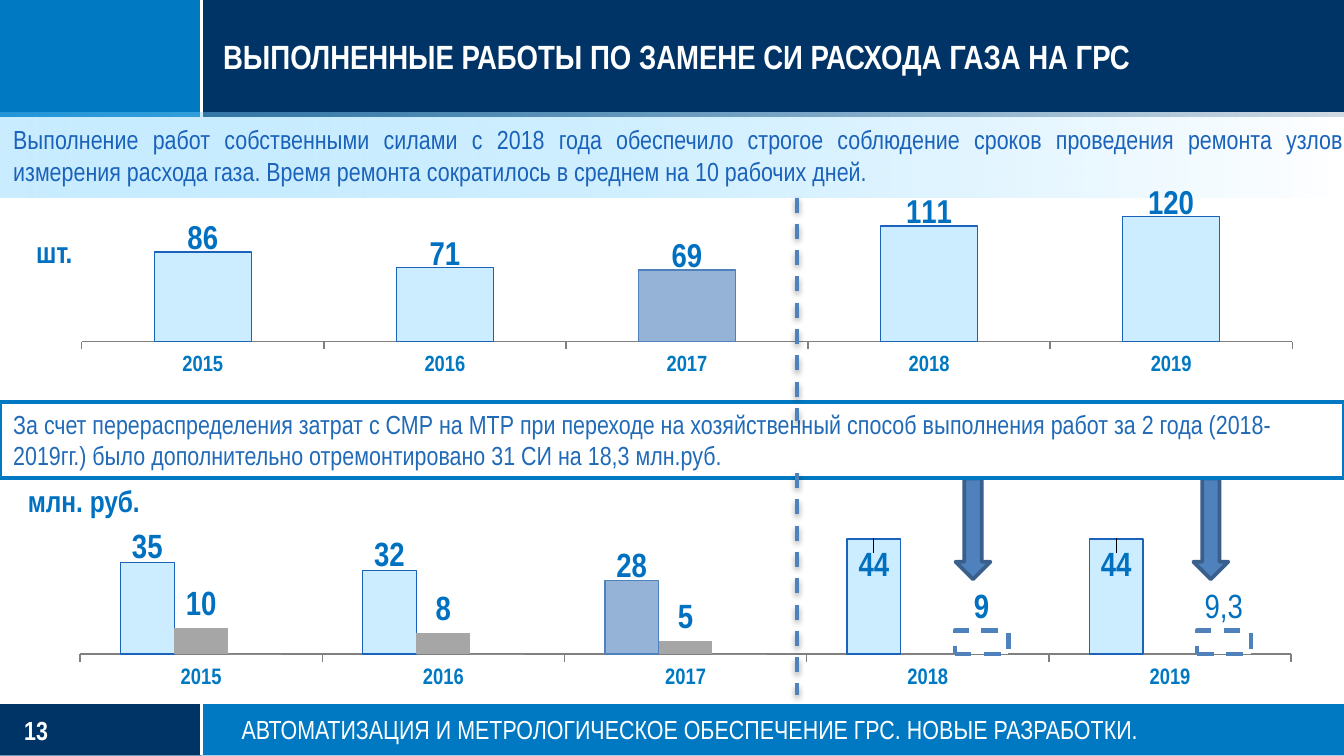
import pptx
import pptx.chart.data
import pptx.dml.color
import pptx.enum.chart
import pptx.enum.dml
import pptx.enum.shapes
import pptx.enum.text
import pptx.oxml
import pptx.oxml.ns
import pptx.util

Inches, Pt = pptx.util.Inches, pptx.util.Pt
SHAPE = pptx.enum.shapes.MSO_SHAPE
DASH = pptx.enum.dml.MSO_LINE.DASH
ALIGN = pptx.enum.text.PP_ALIGN
ANCHOR = pptx.enum.text.MSO_ANCHOR
LABEL = pptx.enum.chart.XL_LABEL_POSITION

FONT = "Arial Narrow"
COLORS = {
    "white": "FFFFFF", "blue": "0079C2", "navy": "003366", "label": "0070C0",
    "sky": "66CCFF", "pale": "CCECFF", "muted": "95B3D7", "steel": "4F81BD",
    "steel_dark": "3A5F8C", "bar_edge": "1A62BA", "note": "206AB7",
    "gray": "A6A6A6", "axis": "808080", "black": "000000",
}
YEARS = ["2015", "2016", "2017", "2018", "2019"]
BAR_COLORS = ["pale", "pale", "muted", "pale", "pale"]
SIDE, SPLIT = 1.5, 5.93  # left column edge, divider between 2017 and 2018
LABEL_DROP = 0.04  # main labels sit lower by this share of the chart height


def rgb(name):
    return pptx.dml.color.RGBColor.from_string(COLORS[name])


def style_font(font, size, color, bold=False):
    font.name, font.size, font.bold = FONT, Pt(size), bold
    font.color.rgb = rgb(color)


def style_line(line, color, width, dash=None):
    line.color.rgb = rgb(color)
    line.width = Pt(width)
    if dash is not None:
        line.dash_style = dash


def add_block(slide, box, fill=None, line=None, kind=SHAPE.RECTANGLE):
    shape = slide.shapes.add_shape(kind, *map(Inches, box))
    shape.shadow.inherit = False
    if fill:
        shape.fill.solid()
        shape.fill.fore_color.rgb = rgb(fill)
    else:
        shape.fill.background()
    if line:
        style_line(shape.line, *line)
    else:
        shape.line.fill.background()
    return shape


def write(shape, text, size, color, bold=False, align=ALIGN.LEFT,
          anchor=ANCHOR.TOP, insets=(0.1, 0.05, 0.1, 0.05), wrap=True):
    frame = shape.text_frame
    frame.word_wrap = wrap
    frame.vertical_anchor = anchor
    (frame.margin_left, frame.margin_top,
     frame.margin_right, frame.margin_bottom) = map(Inches, insets)
    paragraph = frame.paragraphs[0]
    paragraph.alignment = align
    run = paragraph.add_run()
    run.text = text
    style_font(run.font, size, color, bold)


def add_text(slide, box, text, size, color, **options):
    write(slide.shapes.add_textbox(*map(Inches, box)), text, size, color, **options)


def add_line(slide, start, end, color, width, dash=None, shadow=""):
    line = slide.shapes.add_connector(
        pptx.enum.shapes.MSO_CONNECTOR.STRAIGHT, *map(Inches, start + end))
    style_line(line.line, color, width, dash)
    namespace = pptx.oxml.ns.nsdecls("a")
    line._element.spPr.append(
        pptx.oxml.parse_xml(f"<a:effectLst {namespace}>{shadow}</a:effectLst>"))


def add_band(slide, box, left_color, right_color):
    """Horizontal bar split into a side block and a main block."""
    left, top, width, height = box
    add_block(slide, box, right_color)
    add_block(slide, (left, top, SIDE, height), left_color)
    add_line(slide, (SIDE, top), (SIDE, top + height), "white", 1.25)


def add_header(slide, box):
    left, top, width, height = box
    add_band(slide, box, "blue", "navy")
    add_line(slide, (left, top + 0.88), (left + width, top + 0.88), "white", 1.25)
    add_text(slide, (left + 1.66, top, 8.15, 0.84),
             "ВЫПОЛНЕННЫЕ РАБОТЫ ПО ЗАМЕНЕ СИ РАСХОДА ГАЗА НА ГРС", 18, "white",
             bold=True, anchor=ANCHOR.MIDDLE, insets=(0, 0, 0, 0))


def add_footer(slide, box):
    left, top, width, height = box
    add_band(slide, box, "navy", "blue")
    add_line(slide, (left, top), (left + width, top), "white", 1.25)
    add_text(slide, (left + 0.18, top + 0.08, 1.01, 0.24), "13", 14, "white",
             bold=True, anchor=ANCHOR.MIDDLE, insets=(0, 0, 0, 0))
    add_text(slide, (left + 1.7, top + 0.03, 8.01, 0.34),
             "АВТОМАТИЗАЦИЯ И МЕТРОЛОГИЧЕСКОЕ ОБЕСПЕЧЕНИЕ ГРС. НОВЫЕ РАЗРАБОТКИ.",
             14, "white")


def add_banner(slide, box):
    banner = add_block(slide, box)
    banner.fill.gradient()
    banner.fill.gradient_angle = 0
    stops = zip(banner.fill.gradient_stops, ("sky", "white"), (0, 1))
    for stop, color, position in stops:
        stop.color.rgb = rgb(color)
        stop.position = position
    colors = banner._element.spPr.findall(".//" + pptx.oxml.ns.qn("a:srgbClr"))
    for color, opacity in zip(colors, (35, 82)):
        color.append(pptx.oxml.parse_xml(
            f'<a:alpha {pptx.oxml.ns.nsdecls("a")} val="{opacity * 1000}"/>'))
    write(banner, "Выполнение работ собственными силами с 2018 года обеспечило "
          "строгое соблюдение сроков проведения ремонта узлов измерения расхода "
          "газа. Время ремонта сократилось в среднем на 10 рабочих дней.",
          14, "bar_edge", align=ALIGN.JUSTIFY, anchor=ANCHOR.MIDDLE,
          insets=(0.1, 0, 0, 0))


def add_note(slide, box):
    write(add_block(slide, box, line=("blue", 2.25)),
          "За счет перераспределения затрат с СМР на МТР при переходе на "
          "хозяйственный способ выполнения работ за 2 года (2018-2019гг.) было "
          "дополнительно отремонтировано 31 СИ на 18,3 млн.руб.", 14, "note")


def label_point(point, position=LABEL.OUTSIDE_END):
    label = point.data_label
    style_font(label.font, 18, "label", True)
    label.position = position


def manual_layout(content):
    return pptx.oxml.parse_xml(
        f'<c:layout {pptx.oxml.ns.nsdecls("c")}><c:manualLayout>{content}'
        "</c:manualLayout></c:layout>")


def add_columns(slide, box, series_values, maximum, plot):
    data = pptx.chart.data.CategoryChartData()
    data.categories = YEARS
    for number, values in enumerate(series_values, 1):
        data.add_series(f"Series {number}", values)
    chart = slide.shapes.add_chart(
        pptx.enum.chart.XL_CHART_TYPE.COLUMN_CLUSTERED, *map(Inches, box), data).chart
    chart.has_legend = chart.has_title = False
    chart.font.name, chart.font.size = "Calibri", Pt(18)
    chart.font.color.rgb = rgb("black")

    axis = chart.category_axis
    axis.major_tick_mark = pptx.enum.chart.XL_TICK_MARK.OUTSIDE
    style_font(axis.tick_labels.font, 12, "blue", True)
    style_line(axis.format.line, "axis", 0.75)
    scale = chart.value_axis
    scale.minimum_scale, scale.maximum_scale = 0, maximum
    scale.has_major_gridlines = scale.visible = False

    columns = chart.plots[0]
    columns.gap_width, columns.overlap = 150, 0
    columns.vary_by_categories = False
    main = columns.series[0]
    for index, color in enumerate(BAR_COLORS):
        point = main.points[index]
        point.format.fill.solid()
        point.format.fill.fore_color.rgb = rgb(color)
        style_line(point.format.line, "steel" if color == "muted" else "bar_edge", 0.75)
        label_point(point)
    for label in main._element.iter(pptx.oxml.ns.qn("c:dLbl")):
        label.insert(1, manual_layout(f'<c:x val="0"/><c:y val="{LABEL_DROP}"/>'))

    # Inner plot area as fractions of the chart
    parts = "".join(f'<c:{tag} val="{value}"/>' for tag, value in zip("xywh", plot))
    area = chart._chartSpace.chart.plotArea
    for layout in area.findall(pptx.oxml.ns.qn("c:layout")):
        area.remove(layout)
    area.insert(0, manual_layout(
        '<c:layoutTarget val="inner"/><c:xMode val="edge"/><c:yMode val="edge"/>' + parts))
    return columns.series


def add_count_chart(slide, box):
    add_columns(slide, box, [(86, 71, 69, 111, 120)], 136, (0.03, 0.02, 0.97, 0.59))
    add_text(slide, (box[0] - 0.16, box[1] + 0.27, 0.59, 0.37), "шт.", 16, "label",
             bold=True, wrap=False)


def add_cost_chart(slide, box):
    left, top, width, height = box
    main, works, savings = add_columns(
        slide, box, [(35, 32, 28, 44, 44), (10, 8, 5, 0, 0), (0, 0, 0, 9, 9)],
        50, (0.02, 0.13, 0.97, 0.62))
    works.format.fill.solid()
    works.format.fill.fore_color.rgb = rgb("gray")
    for index in range(3):
        label_point(works.points[index])
    savings.format.fill.solid()
    savings.format.fill.fore_color.rgb = rgb("white")
    for index in (3, 4):
        label_point(main.points[index], LABEL.INSIDE_END)
        point = savings.points[index]
        point.format.fill.solid()
        point.format.fill.fore_color.rgb = rgb("white")
        style_line(point.format.line, "steel", 2.25, DASH)
        if index == 3:
            label_point(point)
    label = savings.points[4].data_label
    run = label.text_frame.paragraphs[0].add_run()
    run.text = "9,3"
    style_font(run.font, 18, "label")
    label.position = LABEL.OUTSIDE_END

    add_text(slide, (left - 0.3, top - 0.15, 1.1, 0.37), "млн. руб.", 16, "label",
             bold=True, wrap=False)
    for x in (6.7, 8.47):
        add_block(slide, (left + x, top - 0.13, 0.26, 0.75), "steel",
                  ("steel_dark", 2), SHAPE.DOWN_ARROW)


def add_divider(slide, top, bottom):
    add_line(slide, (SPLIT, top), (SPLIT, bottom), "steel", 2, DASH,
             '<a:outerShdw blurRad="40000" dist="20000" dir="5400000" rotWithShape="0">'
             '<a:srgbClr val="000000"><a:alpha val="38000"/></a:srgbClr></a:outerShdw>')


def main():
    presentation = pptx.Presentation()
    presentation.slide_width = Inches(10)
    presentation.slide_height = Inches(10) * 9 // 16
    slide = presentation.slides.add_slide(presentation.slide_layouts[6])
    add_header(slide, (0, 0, 10, 0.87))
    add_footer(slide, (0, 5.23, 10, 0.39))
    add_banner(slide, (0, 0.84, 10, 0.63))
    add_count_chart(slide, (0.33, 1.42, 9.29, 1.82))
    add_cost_chart(slide, (0.41, 3.69, 9.29, 1.57))
    add_note(slide, (0, 2.99, 10, 0.57))
    add_divider(slide, 1.47, 3.13)
    add_divider(slide, 3.52, 5.17)
    presentation.save("out.pptx")


if __name__ == "__main__":
    main()
